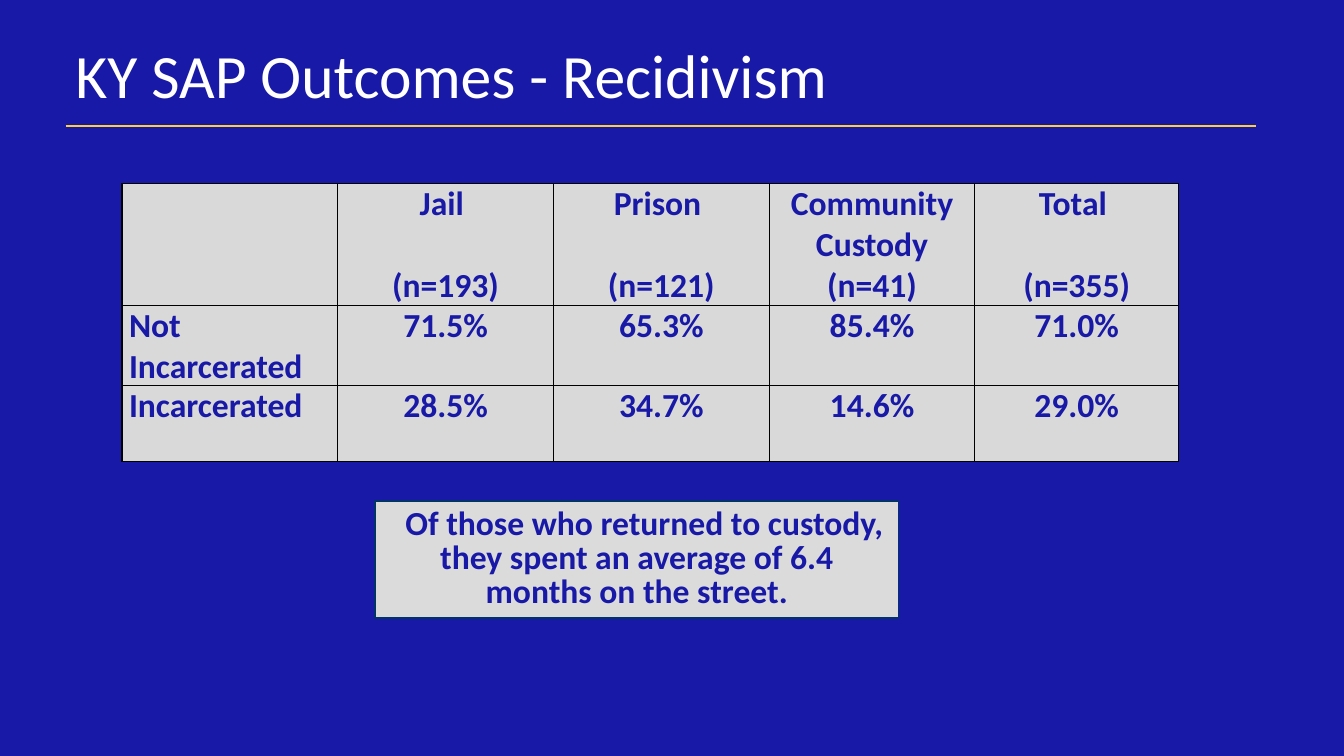
from dataclasses import dataclass

from lxml import etree
from pptx import Presentation
from pptx.dml.color import RGBColor
from pptx.enum.shapes import MSO_CONNECTOR, MSO_SHAPE
from pptx.enum.text import MSO_ANCHOR, PP_ALIGN
from pptx.oxml.ns import qn
from pptx.util import Inches, Pt

LEFT, CENTER = PP_ALIGN.LEFT, PP_ALIGN.CENTER
MIDDLE = MSO_ANCHOR.MIDDLE
RECTANGLE = MSO_SHAPE.RECTANGLE
STRAIGHT = MSO_CONNECTOR.STRAIGHT


@dataclass(frozen=True)
class Theme:
    font: str = "Calibri"
    background: str = "1919A7"
    title: str = "FFFFFF"
    rule: str = "FFCF37"
    body: str = "1919A7"
    cell: str = "D9D9D9"
    border: str = "000000"
    note_fill: str = "DBDBDB"
    note_line: str = "003366"
    title_size: int = 44
    body_size: int = 24


THEME = Theme()

COLUMN_WIDTHS = [2.14, 2.14, 2.14, 2.04, 2.02]
ROW_HEIGHTS = [1.11, 0.55, 0.75]
# Each cell is a list of paragraphs
OUTCOMES = [
    [[], ["Jail ", "(n=193)"], ["Prison ", "(n=121)"],
     ["Community Custody (n=41)"], ["Total ", "(n=355)"]],
    [["Not Incarcerated"], ["71.5%"], ["65.3%"], ["85.4%"], ["71.0%"]],
    [["Incarcerated"], ["28.5%"], ["34.7%"], ["14.6%"], ["29.0%"]],
]


def rgb(value):
    return RGBColor.from_string(value)


def paint(fill, color):
    fill.solid()
    fill.fore_color.rgb = rgb(color)


def add_run(paragraph, text, size, color, bold=False):
    run = paragraph.add_run()
    run.text = text
    run.font.name = THEME.font
    run.font.size = Pt(size)
    run.font.bold = bold
    run.font.color.rgb = rgb(color)


def add_title(slide, text):
    title = slide.shapes.add_textbox(Inches(0.65), Inches(0.05), Inches(11.5), Inches(1.45))
    frame = title.text_frame
    frame.word_wrap = True
    frame.vertical_anchor = MIDDLE
    paragraph = frame.paragraphs[0]
    paragraph.line_spacing = 0.9
    add_run(paragraph, text, THEME.title_size, THEME.title)


def add_rule(slide, left, right, y):
    rule = slide.shapes.add_connector(
        STRAIGHT, Inches(left), Inches(y), Inches(right), Inches(y))
    rule.line.color.rgb = rgb(THEME.rule)
    rule.line.width = Pt(1.25)
    etree.SubElement(rule._element.spPr, qn("a:effectLst"))


def set_borders(cell):
    properties = cell._tc.get_or_add_tcPr()
    for position, side in enumerate(("a:lnL", "a:lnR", "a:lnT", "a:lnB")):
        border = etree.Element(qn(side), w=str(Pt(1)))
        solid = etree.SubElement(border, qn("a:solidFill"))
        etree.SubElement(solid, qn("a:srgbClr"), val=THEME.border)
        properties.insert(position, border)


def fill_cell(cell, lines, alignment):
    cell.margin_left = cell.margin_right = Inches(0.07)
    cell.margin_top = cell.margin_bottom = 0
    paint(cell.fill, THEME.cell)
    set_borders(cell)
    frame = cell.text_frame
    for index, line in enumerate(lines):
        paragraph = frame.add_paragraph() if index else frame.paragraphs[0]
        paragraph.alignment = alignment
        if index:
            # One line of space sets the sample size on the header's last line
            paragraph.space_before = Pt(29.3)
        add_run(paragraph, line, THEME.body_size, THEME.body, bold=True)


def add_outcomes_table(slide):
    table = slide.shapes.add_table(
        len(ROW_HEIGHTS), len(COLUMN_WIDTHS), Inches(1.21), Inches(1.82),
        Inches(sum(COLUMN_WIDTHS)), Inches(sum(ROW_HEIGHTS))).table
    table.first_row = table.horz_banding = False
    for column, width in zip(table.columns, COLUMN_WIDTHS):
        column.width = Inches(width)
    for row, height, contents in zip(table.rows, ROW_HEIGHTS, OUTCOMES):
        row.height = Inches(height)
        for index, (cell, lines) in enumerate(zip(row.cells, contents)):
            fill_cell(cell, lines, CENTER if index else LEFT)


def add_note(slide, text):
    note = slide.shapes.add_shape(
        RECTANGLE, Inches(3.72), Inches(4.97), Inches(5.19), Inches(1.16))
    note.shadow.inherit = False
    paint(note.fill, THEME.note_fill)
    note.line.color.rgb = rgb(THEME.note_line)
    note.line.width = Pt(1)
    frame = note.text_frame
    frame.word_wrap = True
    frame.vertical_anchor = MIDDLE
    paragraph = frame.paragraphs[0]
    paragraph.alignment = CENTER
    paragraph.line_spacing = Pt(24)
    # First-line indent
    paragraph._p.get_or_add_pPr().set("indent", str(Inches(0.15)))
    add_run(paragraph, text, THEME.body_size, THEME.body, bold=True)


def main():
    deck = Presentation()
    deck.slide_width, deck.slide_height = Inches(13.33), Inches(7.5)
    slide = deck.slides.add_slide(deck.slide_layouts[6])
    paint(slide.background.fill, THEME.background)

    # Heading
    add_title(slide, "KY SAP Outcomes - Recidivism")
    add_rule(slide, 0.65, 12.46, 1.25)

    # Results and takeaway
    add_outcomes_table(slide)
    add_note(slide, "Of those who returned to custody, they spent an average "
                    "of 6.4 months on the street.")

    deck.save("out.pptx")


if __name__ == "__main__":
    main()
